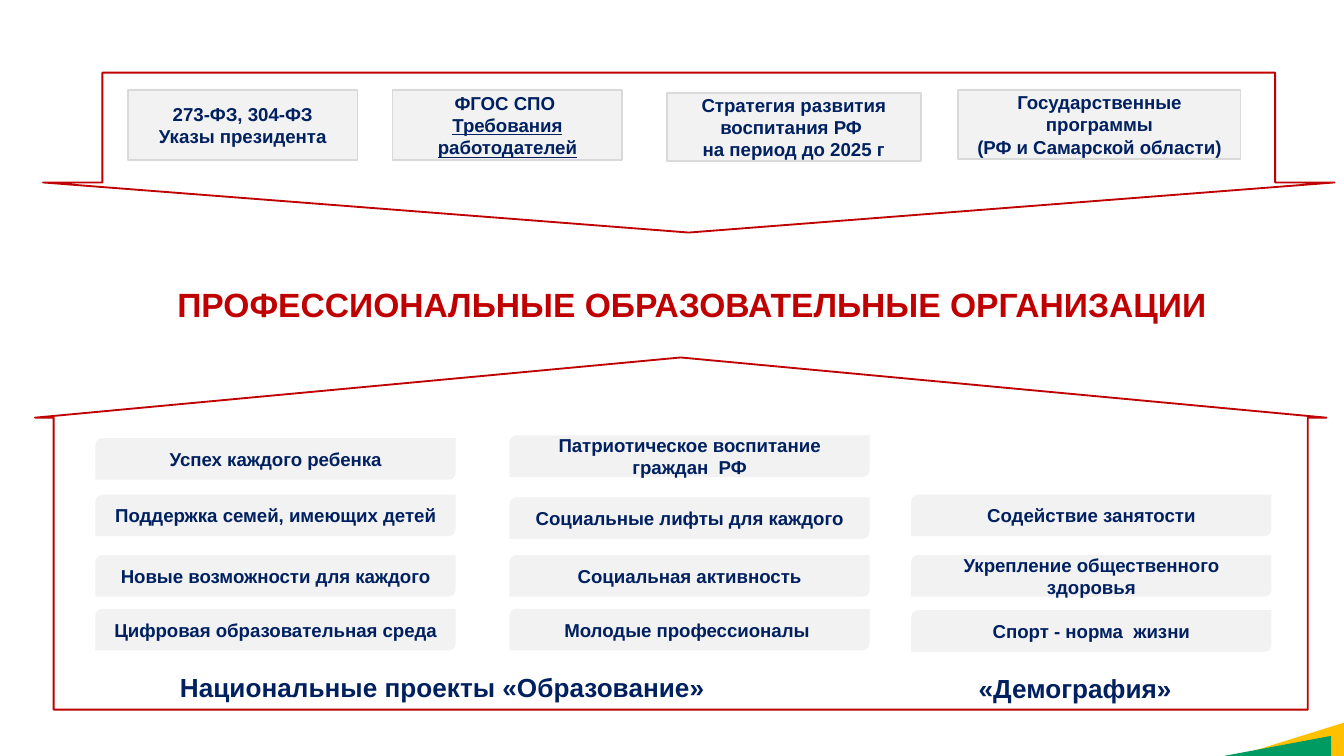
from dataclasses import dataclass

from pptx import Presentation
from pptx import util as u
from pptx.dml.color import RGBColor
from pptx.enum import shapes, text

RED = RGBColor(0xC0, 0x00, 0x00)
NAVY = RGBColor(0x00, 0x20, 0x60)
WHITE = RGBColor(0xFF, 0xFF, 0xFF)
LIGHT_GREY = RGBColor(0xF2, 0xF2, 0xF2)
BORDER_GREY = RGBColor(0xD9, 0xD9, 0xD9)
YELLOW = RGBColor(0xFF, 0xC0, 0x00)
GREEN = RGBColor(0x00, 0x9B, 0x62)

KIND = shapes.MSO_SHAPE
LABEL_FONT = {"name": "Arial", "size": u.Pt(10), "bold": True}
GROUP_FONT = {**LABEL_FONT, "size": u.Pt(14)}
TITLE_FONT = {**LABEL_FONT, "size": u.Pt(18)}


@dataclass
class Box:
    left: float
    top: float
    width: float
    height: float
    lines: tuple = ()
    underlined: int = -1  # index of the underlined line


@dataclass
class Column:
    left: float
    projects: tuple  # pairs of top and label


LAWS = (
    Box(0.95, 0.67, 1.71, 0.52, ("273-ФЗ, 304-ФЗ", "Указы президента")),
    Box(2.92, 0.67, 1.71, 0.52, ("ФГОС СПО ", "Требования работодателей"), 1),
    Box(4.96, 0.69, 1.89, 0.51,
        ("Стратегия развития воспитания РФ ", "на период до 2025 г")),
    Box(7.13, 0.67, 2.1, 0.51,
        ("Государственные программы", "(РФ и Самарской области)")),
)
COLUMNS = (
    Column(0.71, ((3.26, "Успех каждого ребенка"),
                  (3.68, "Поддержка семей, имеющих детей"),
                  (4.13, "Новые возможности для каждого"),
                  (4.53, "Цифровая образовательная среда"))),
    Column(3.79, ((3.24, "Патриотическое воспитание граждан  РФ"),
                  (3.7, "Социальные лифты для каждого"),
                  (4.13, "Социальная активность"),
                  (4.53, "Молодые профессионалы "))),
    Column(6.78, ((3.68, "Содействие занятости"),
                  (4.13, "Укрепление общественного здоровья"),
                  (4.54, "Спорт - норма  жизни"))),
)


def write_lines(frame, lines: tuple, font: dict, color: RGBColor,
                underlined: int = -1) -> None:
    frame.word_wrap = True
    frame.vertical_anchor = text.MSO_ANCHOR.MIDDLE
    for index, words in enumerate(lines):
        paragraph = frame.add_paragraph() if index else frame.paragraphs[0]
        paragraph.alignment = text.PP_ALIGN.CENTER
        run = paragraph.add_run()
        run.text = words
        for name, value in font.items():
            setattr(run.font, name, value)
        run.font.color.rgb = color
        if index == underlined:
            run.font.underline = True


def add_box(slide, kind, box: Box, fill=None, line=None, adjustments=(),
            font: dict = LABEL_FONT):
    shape = slide.shapes.add_shape(
        kind, u.Inches(box.left), u.Inches(box.top),
        u.Inches(box.width), u.Inches(box.height))
    shape.shadow.inherit = False
    for index, value in enumerate(adjustments):
        shape.adjustments[index] = value
    if fill is None:
        shape.fill.background()
    else:
        shape.fill.solid()
        shape.fill.fore_color.rgb = fill
    if line is None:
        shape.line.fill.background()
    else:
        shape.line.color.rgb = line
        shape.line.width = u.Pt(1)
    write_lines(shape.text_frame, box.lines, font, NAVY, box.underlined)
    return shape


def format_title(title) -> None:
    title.left, title.top = u.Inches(0.95), u.Inches(1.98)
    title.width, title.height = u.Inches(8.4), u.Inches(0.56)
    title.fill.solid()
    title.fill.fore_color.rgb = WHITE
    title.text_frame.auto_size = text.MSO_AUTO_SIZE.NONE
    write_lines(title.text_frame,
                ("ПРОФЕССИОНАЛЬНЫЕ ОБРАЗОВАТЕЛЬНЫЕ ОРГАНИЗАЦИИ",),
                TITLE_FONT, RED)


def main() -> None:
    presentation = Presentation()
    presentation.slide_width = u.Inches(10)
    presentation.slide_height = presentation.slide_width * 9 // 16
    slide = presentation.slides.add_slide(presentation.slide_layouts[5])

    # Corner decoration
    for box, color in ((Box(9.46, 5.09, 0.26, 0.83), YELLOW),
                       (Box(9.43, 5.15, 0.15, 0.8), GREEN)):
        add_box(slide, KIND.RIGHT_TRIANGLE, box, color).rotation = 270

    format_title(slide.shapes.title)

    # Laws and programmes in the arrow from above
    add_box(slide, KIND.DOWN_ARROW, Box(0.32, 0.54, 9.61, 1.19),
            line=RED, adjustments=(0.908, 0.313))
    for law in LAWS:
        add_box(slide, KIND.ROUNDED_RECTANGLE, law, LIGHT_GREY, BORDER_GREY, (0,))

    # National projects in the arrow from below
    arrow = add_box(slide, KIND.UP_ARROW,
                    Box(0.26, 2.66, 9.61, 2.62,
                        ("Национальные проекты «Образование»",)),
                    WHITE, RED, (0.971, 0.171), GROUP_FONT)
    frame = arrow.text_frame
    frame.vertical_anchor = text.MSO_ANCHOR.BOTTOM
    frame.margin_left = u.Inches(0.94)
    frame.paragraphs[0].alignment = text.PP_ALIGN.LEFT
    for column in COLUMNS:
        for top, label in column.projects:
            add_box(slide, KIND.ROUND_2_DIAG_RECTANGLE,
                    Box(column.left, top, 2.68, 0.31, (label,)), LIGHT_GREY)

    # Name of the second group of projects
    group_name = slide.shapes.add_textbox(
        u.Inches(7.1), u.Inches(4.97), u.Inches(1.8), u.Inches(0.3))
    write_lines(group_name.text_frame, ("«Демография»",), GROUP_FONT, NAVY)

    presentation.save("out.pptx")


if __name__ == "__main__":
    main()
